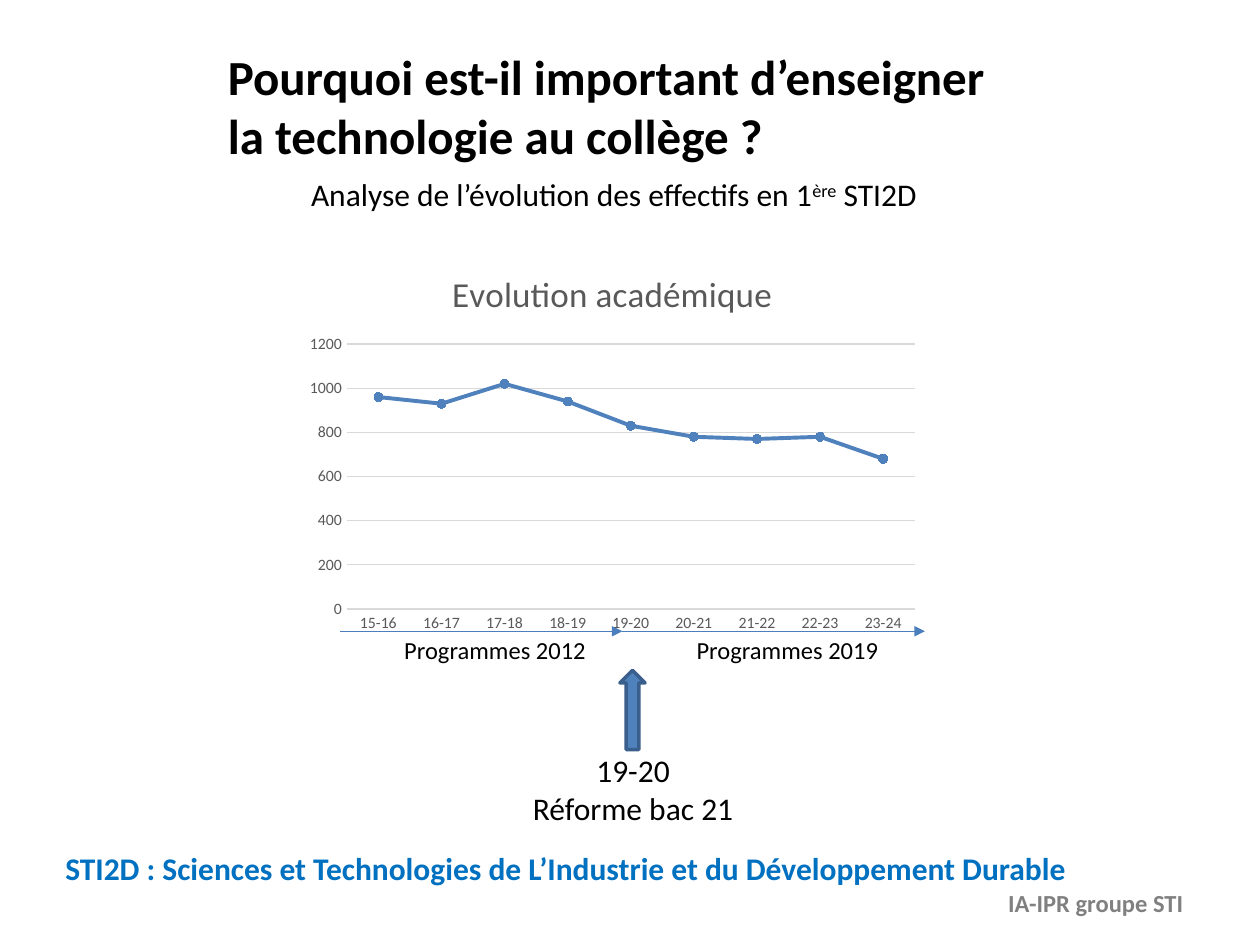
from dataclasses import dataclass

from lxml import etree
from pptx import Presentation
from pptx import util as u
from pptx.chart import data as chart_data
from pptx.dml.color import RGBColor
from pptx.enum import chart as charts, shapes, text
from pptx.oxml import ns

Inches, Pt = u.Inches, u.Pt


@dataclass(frozen=True)
class Theme:
    font: str = "Calibri"
    black: RGBColor = RGBColor(0, 0, 0)
    footer: RGBColor = RGBColor(0x80, 0x80, 0x80)
    note: RGBColor = RGBColor(0x00, 0x70, 0xC0)
    series: RGBColor = RGBColor(0x4F, 0x81, 0xBD)
    outline: RGBColor = RGBColor(0x3A, 0x5F, 0x8C)
    arrow: RGBColor = RGBColor(0x4B, 0x7E, 0xBC)
    label: RGBColor = RGBColor(0x59, 0x59, 0x59)
    grid: RGBColor = RGBColor(0xD9, 0xD9, 0xD9)
    title_size: Pt = Pt(28)
    chart_title_size: Pt = Pt(20)
    body_size: Pt = Pt(18)
    small_size: Pt = Pt(14)
    axis_size: Pt = Pt(9)


theme = Theme()


def style_font(font, size, color, bold=False):
    font.name, font.size, font.bold = theme.font, size, bold
    font.color.rgb = color


def add_text(place, lines, size, color=theme.black, bold=False, align=text.PP_ALIGN.LEFT):
    """Add a wrapped text box with one paragraph per line and return its frame."""
    box = page.shapes.add_textbox(*map(Inches, place))
    frame = box.text_frame
    frame.word_wrap = True
    frame.auto_size = text.MSO_AUTO_SIZE.SHAPE_TO_FIT_TEXT
    frame.text = "\n".join(lines)
    for para in frame.paragraphs:
        para.alignment = align
        style_font(para.font, size, color, bold)
    return frame


deck = Presentation()
deck.slide_width, deck.slide_height = Inches(10), Inches(7.5)
page = deck.slides.add_slide(deck.slide_layouts[6])

# Footer, title and subtitle
add_text((6.42, 7, 3.07, 0.34), ["IA-IPR groupe STI"], theme.small_size,
         theme.footer, True, text.PP_ALIGN.RIGHT)
add_text((1.71, 0.32, 7.24, 1.04),
         ["Pourquoi est-il important d’enseigner", "la technologie au collège ?"],
         theme.title_size, bold=True)
subtitle = add_text((2.37, 1.34, 5.39, 0.4),
                    ["Analyse de l’évolution des effectifs en 1"], theme.body_size)
ordinal = subtitle.paragraphs[0].add_run()
ordinal.text = "ère"
ordinal.font._element.set("baseline", "30000")
subtitle.paragraphs[0].add_run().text = " STI2D"

# Reform marker
reform = page.shapes.add_shape(shapes.MSO_SHAPE.UP_ARROW, Inches(4.92), Inches(5.32),
                               Inches(0.2), Inches(0.63))
reform.shadow.inherit = False
reform.fill.solid()
reform.fill.fore_color.rgb = theme.series
reform.line.color.rgb = theme.outline
reform.line.width = Pt(2)
add_text((4.04, 5.91, 1.97, 0.71), ["19-20", "Réforme bac 21"], theme.body_size,
         align=text.PP_ALIGN.CENTER)

# Curriculum periods below the chart
periods = [
    (2.7, 4.94, 3.11, 1.65, "Programmes 2012"),
    (4.94, 7.34, 5.43, 1.68, "Programmes 2019"),
]
for start, end, label_left, label_width, label in periods:
    span = page.shapes.add_connector(shapes.MSO_CONNECTOR.STRAIGHT, Inches(start),
                                     Inches(5.01), Inches(end), Inches(5.01))
    span.line.color.rgb = theme.arrow
    span.line.width = Pt(0.75)
    etree.SubElement(span.line._get_or_add_ln(), ns.qn("a:tailEnd"), type="triangle")
    etree.SubElement(span._element.spPr, ns.qn("a:effectLst"))
    add_text((label_left, 4.99, label_width, 0.34), [label], theme.small_size)

add_text((0.42, 6.69, 8.7, 0.4),
         ["STI2D : Sciences et Technologies de L’Industrie et du Développement Durable"],
         theme.body_size, theme.note, True)

# Enrolment chart
enrolment = chart_data.CategoryChartData()
enrolment.categories = [f"{year}-{year + 1}" for year in range(15, 24)]
enrolment.add_series("Effectifs", [960, 930, 1020, 940, 830, 780, 770, 780, 680])
chart = page.shapes.add_chart(charts.XL_CHART_TYPE.LINE_MARKERS, Inches(2.36), Inches(1.97),
                              Inches(5), Inches(3.11), enrolment).chart
style_font(chart.font, Pt(10), theme.black)
chart.has_legend = False
chart.has_title = True
chart.chart_title.include_in_layout = False
chart.chart_title.text_frame.text = "Evolution académique"
style_font(chart.chart_title.text_frame.paragraphs[0].font, theme.chart_title_size, theme.label)

for axis in (chart.category_axis, chart.value_axis):
    axis.major_tick_mark = axis.minor_tick_mark = charts.XL_TICK_MARK.NONE
    style_font(axis.tick_labels.font, theme.axis_size, theme.label)
chart.value_axis.minimum_scale, chart.value_axis.maximum_scale = 0, 1200
chart.value_axis.major_unit = 200
chart.value_axis.format.line.fill.background()
for line in (chart.category_axis.format.line, chart.value_axis.major_gridlines.format.line):
    line.color.rgb = theme.grid
    line.width = Pt(0.75)

chart.plots[0].vary_by_categories = False
series = chart.plots[0].series[0]
series.smooth = False
series.format.line.color.rgb = theme.series
series.format.line.width = Pt(2.25)
series.marker.style = charts.XL_MARKER_STYLE.CIRCLE
series.marker.size = 5
series.marker.format.fill.solid()
series.marker.format.fill.fore_color.rgb = theme.series
series.marker.format.line.color.rgb = theme.series

deck.save("out.pptx")
